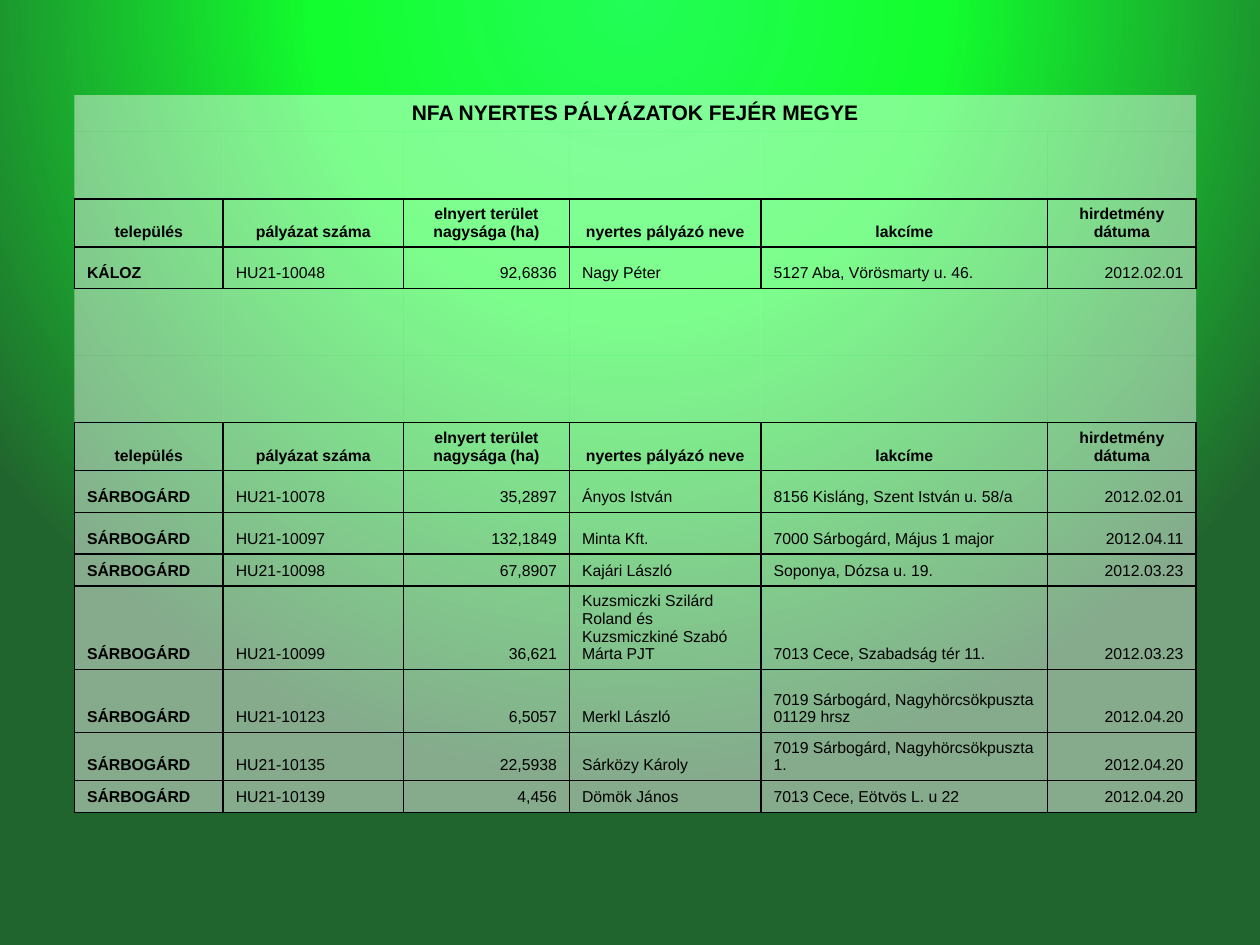
from lxml.etree import SubElement
from pptx import Presentation
from pptx.dml.color import RGBColor
from pptx.enum.text import MSO_ANCHOR, PP_ALIGN
from pptx.oxml import parse_xml
from pptx.oxml.ns import nsdecls, qn
from pptx.util import Cm, Pt

FONT = "Arial"
BLACK, WHITE = "000000", "FFFFFF"
NO_STYLE = "{2D5ABB26-0587-4C30-8999-92F81FD0307C}"
LEFT, CENTER, RIGHT = PP_ALIGN.LEFT, PP_ALIGN.CENTER, PP_ALIGN.RIGHT

TITLE = "NFA NYERTES PÁLYÁZATOK FEJÉR MEGYE"
HEADER = ["település", "pályázat száma", "elnyert terület nagysága (ha)",
          "nyertes pályázó neve", "lakcíme", "hirdetmény dátuma"]
BLANK = [""] * len(HEADER)
COLUMN_WIDTHS = [3, 3.63, 3.35, 3.86, 5.78, 2.99]
COLUMN_ALIGNS = [LEFT, LEFT, RIGHT, LEFT, LEFT, RIGHT]

# Row height in cm, then the cell texts
ROWS = [
    (0.72, [TITLE] + BLANK[1:]),
    (1.36, BLANK),
    (0.97, HEADER),
    (0.84, ["KÁLOZ", "HU21-10048", "92,6836", "Nagy Péter",
            "5127 Aba, Vörösmarty u. 46.", "2012.02.01"]),
    (1.35, BLANK),
    (1.35, BLANK),
    (0.97, HEADER),
    (0.84, ["SÁRBOGÁRD", "HU21-10078", "35,2897", "Ányos István",
            "8156 Kisláng, Szent István u. 58/a", "2012.02.01"]),
    (0.84, ["SÁRBOGÁRD", "HU21-10097", "132,1849", "Minta Kft.",
            "7000 Sárbogárd, Május 1 major", "2012.04.11"]),
    (0.64, ["SÁRBOGÁRD", "HU21-10098", "67,8907", "Kajári László",
            "Soponya, Dózsa u. 19.", "2012.03.23"]),
    (1.69, ["SÁRBOGÁRD", "HU21-10099", "36,621",
            "Kuzsmiczki Szilárd Roland és Kuzsmiczkiné Szabó Márta PJT",
            "7013 Cece, Szabadság tér 11.", "2012.03.23"]),
    (1.27, ["SÁRBOGÁRD", "HU21-10123", "6,5057", "Merkl László",
            "7019 Sárbogárd, Nagyhörcsökpuszta 01129 hrsz", "2012.04.20"]),
    (0.96, ["SÁRBOGÁRD", "HU21-10135", "22,5938", "Sárközy Károly",
            "7019 Sárbogárd, Nagyhörcsökpuszta 1.", "2012.04.20"]),
    (0.64, ["SÁRBOGÁRD", "HU21-10139", "4,456", "Dömök János",
            "7013 Cece, Eötvös L. u 22", "2012.04.20"]),
]


def rgb(color):
    return RGBColor.from_string(color)


def set_background(s):
    """Radial green gradient centred at the top edge."""
    fill = s.background.fill
    fill.gradient()
    grad = s.background._cSld.find(".//" + qn("a:gradFill"))
    stops = [(0, "23FD57"), (40, "12FE2E"), (100, "21652E")]
    stop_xml = "".join(f'<a:gs pos="{pos * 1000}"><a:srgbClr val="{color}"/></a:gs>'
                       for pos, color in stops)
    new_grad = parse_xml(
        f'<a:gradFill {nsdecls("a")} rotWithShape="1"><a:gsLst>{stop_xml}</a:gsLst>'
        '<a:path path="circle"><a:fillToRect l="50000" t="-80000" r="50000" b="180000"/>'
        '</a:path></a:gradFill>')
    grad.getparent().replace(grad, new_grad)


def set_borders(cell, sides, color=BLACK, width=1):
    tc_pr = cell._tc.get_or_add_tcPr()
    for side in sides:
        tc_pr.append(parse_xml(
            f'<a:ln{side} {nsdecls("a")} w="{Pt(width)}"><a:solidFill>'
            f'<a:srgbClr val="{color}"/></a:solidFill></a:ln{side}>'))


def set_fill(cell, color, opacity):
    cell.fill.solid()
    cell.fill.fore_color.rgb = rgb(color)
    clr = cell._tc.tcPr.find(qn("a:solidFill") + "/" + qn("a:srgbClr"))
    SubElement(clr, qn("a:alpha")).set("val", str(opacity * 1000))


def set_text(cell, text, size, bold, align):
    cell.vertical_anchor = MSO_ANCHOR.BOTTOM
    cell.text_frame.text = text
    p = cell.text_frame.paragraphs[0]
    p.alignment = align
    font = p.runs[0].font
    font.name, font.size, font.bold = FONT, Pt(size), bold
    font.color.rgb = rgb(BLACK)


def add_winners_table(s):
    height = sum(row_height for row_height, _ in ROWS)
    frame = s.shapes.add_table(len(ROWS), len(HEADER), Cm(1.5), Cm(1.92),
                               Cm(sum(COLUMN_WIDTHS)), Cm(height))
    table = frame.table
    table.first_row = table.horz_banding = False
    table._tbl.tblPr.find(qn("a:tableStyleId")).text = NO_STYLE
    for column, width in zip(table.columns, COLUMN_WIDTHS):
        column.width = Cm(width)

    for i, (row_height, texts) in enumerate(ROWS):
        table.rows[i].height = Cm(row_height)
        is_heading = texts is HEADER or i == 0
        for j, text in enumerate(texts):
            cell = table.cell(i, j)
            # Only header and data rows have a grid
            if text and i > 0:
                set_borders(cell, "LRTB")
            set_fill(cell, WHITE, 45)
            if text:
                set_text(cell, text, 12 if i == 0 else 9, is_heading or j == 0,
                         CENTER if is_heading else COLUMN_ALIGNS[j])

    # Title across all columns
    table.cell(0, 0).merge(table.cell(0, len(HEADER) - 1))


def main():
    prs = Presentation()
    prs.slide_width, prs.slide_height = Cm(25.4), Cm(19.05)
    s = prs.slides.add_slide(prs.slide_layouts[6])
    set_background(s)
    add_winners_table(s)
    prs.save("out.pptx")


if __name__ == "__main__":
    main()
